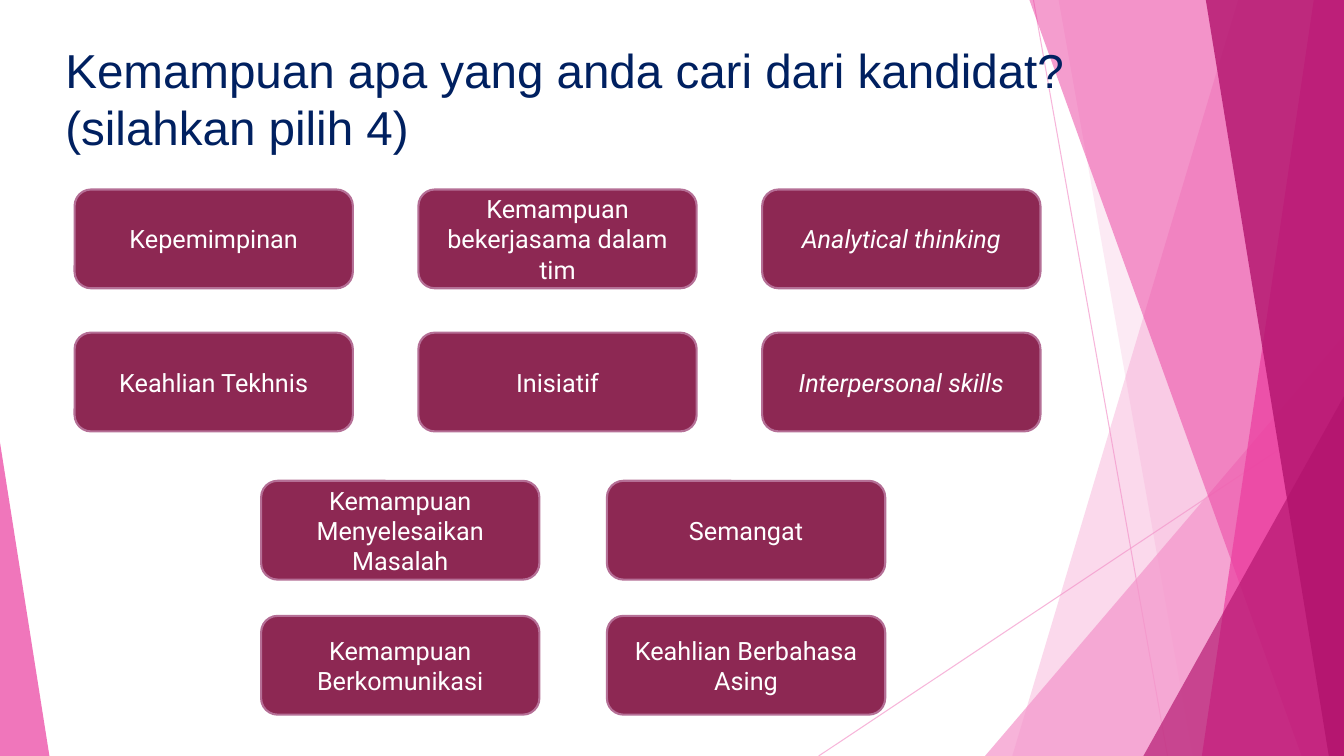
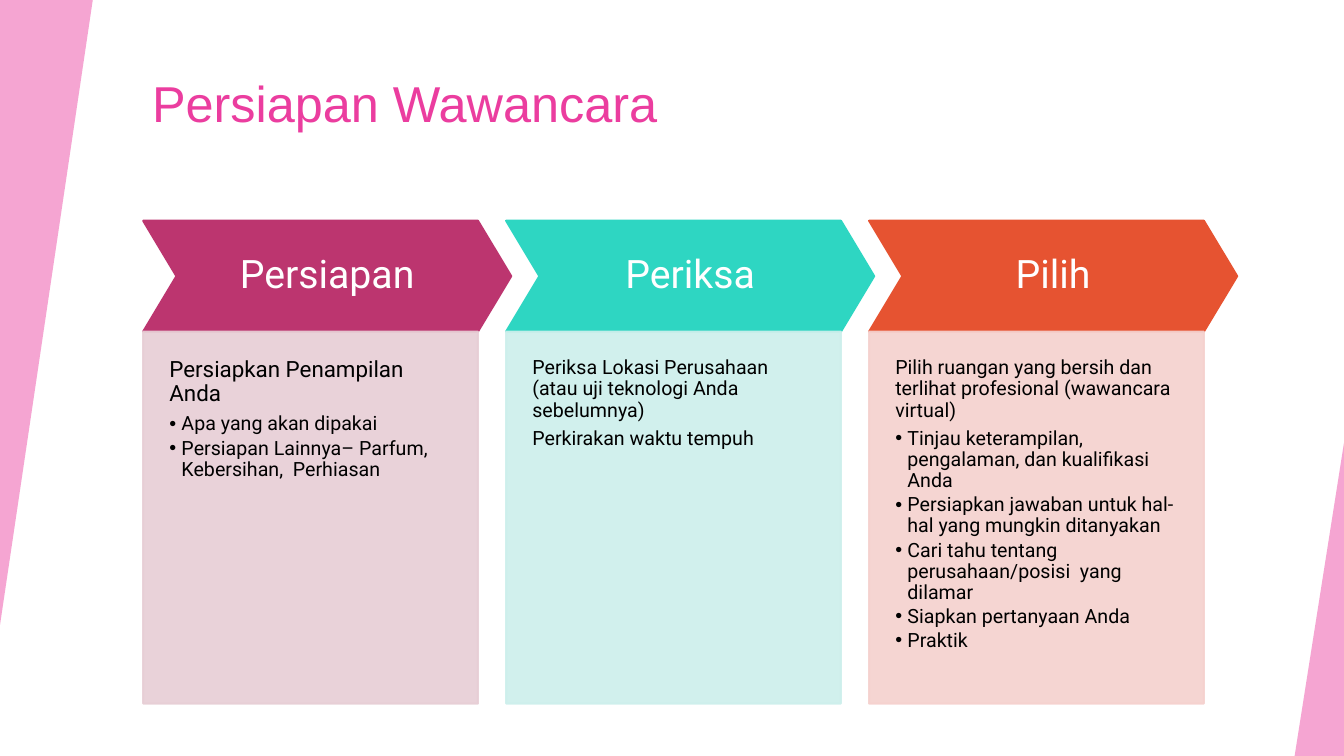
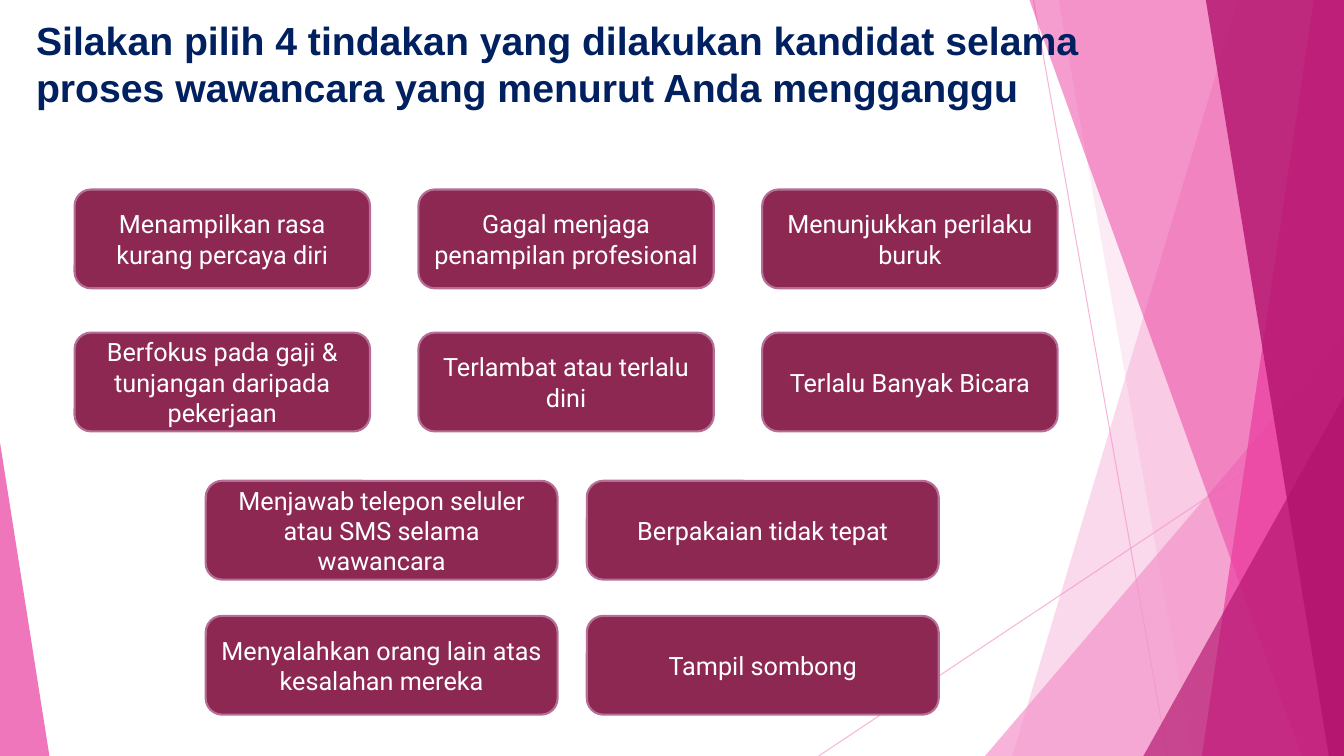
import pptx
import pptx.dml.color
import pptx.enum.shapes
import pptx.enum.text
import pptx.oxml.ns
import pptx.util
from dataclasses import dataclass
from lxml import etree

PX = 9144  # 100 px to the inch
WIDE, HIGH = 1333, 750
KIND = pptx.enum.shapes.MSO_SHAPE
ALIGN = pptx.enum.text.PP_ALIGN
ANCHOR = pptx.enum.text.MSO_ANCHOR


@dataclass(frozen=True)
class Theme:
    head: str = "Arial"
    body: str = "Roboto"
    navy: str = "002060"
    rose: str = "F496CB"
    pink: str = "EB3D9F"
    plum: str = "B2136D"
    tile: str = "8D2853"
    edge: str = "B56F96"
    white: str = "FFFFFF"
    black: str = "000000"
    tile_size: int = 18
    step_size: int = 28
    lead_size: int = 16
    text_size: int = 14
    line: float = 1.5
    thin: float = 0.75


T = Theme()

# Backdrop: lines, then bands and corner triangles from back to front
RAYS = [((1025, 0), (1158, HIGH)), ((WIDE, 403), (812, HIGH))]
# (top left x, bottom left x), reaching to the right edge
BANDS = {
    "rose wide": (1228, 1004, T.rose, 36),
    "rose pale": (1050, 1183, T.rose, 20),
    "pink wide": (1021, 1291, T.pink, 50),
    "pink slim": (1303, 1192, T.pink, 70),
    "plum": (1196, 1318, T.plum, 80),
}
# (left, top, width, height), apex, colour, opacity
WEDGES = {
    "rose": ((977, 333, 356, 417), 1, T.rose, 72),
    "plum": ((1134, 393, 199, 357), 1, T.plum, 66),
    "left": ((0, 439, 49, 311), 0, T.pink, 70),
}
LAYERS = ["rose wide", "rose pale", "rose", "pink wide", "pink slim",
          "plum", "plum", "left"]
ORDER = [(BANDS, "rose wide"), (BANDS, "rose pale"), (WEDGES, "rose"),
         (BANDS, "pink wide"), (BANDS, "pink slim"), (BANDS, "plum"),
         (WEDGES, "plum"), (WEDGES, "left")]

SLANT = {"Analytical thinking", "Interpersonal skills"}

SKILLS = {
    "title": "Kemampuan apa yang anda cari dari kandidat? (silahkan pilih 4)",
    "box": (55, 36, 1080, 107), "size": 34, "bold": False,
    "grids": [
        {"left": 74, "top": 188, "step": 341, "drop": 142, "width": 276,
         "rows": [("Kepemimpinan", "Kemampuan bekerjasama dalam tim",
                   "Analytical thinking"),
                  ("Keahlian Tekhnis", "Inisiatif", "Interpersonal skills")]},
        {"left": 259, "top": 477, "step": 343, "drop": 134, "width": 276,
         "rows": [("Kemampuan Menyelesaikan Masalah", "Semangat"),
                  ("Kemampuan Berkomunikasi", "Keahlian Berbahasa Asing")]},
    ],
}
FAULTS = {
    "title": "Silakan pilih 4 tindakan yang dilakukan kandidat selama "
             "proses wawancara yang menurut Anda mengganggu",
    "box": (26, 11, 1160, 107), "size": 28, "bold": True,
    "grids": [
        {"left": 74, "top": 188, "step": 341, "drop": 142, "width": 293,
         "rows": [("Menampilkan rasa kurang percaya diri",
                   "Gagal menjaga penampilan profesional",
                   "Menunjukkan perilaku buruk"),
                  ("Berfokus pada gaji & tunjangan daripada pekerjaan",
                   "Terlambat atau terlalu dini", "Terlalu Banyak Bicara")]},
        {"left": 204, "top": 477, "step": 378, "drop": 134, "width": 349,
         "rows": [("Menjawab telepon seluler atau SMS selama wawancara",
                   "Berpakaian tidak tepat"),
                  ("Menyalahkan orang lain atas kesalahan mereka",
                   "Tampil sombong")]},
    ],
}
# (heading, colour, panel colour, lead size, leads, bullets)
STEPS = [
    ("Persiapan", "BC356F", "E7CED5", T.lead_size,
     ["Persiapkan Penampilan Anda"],
     ["Apa yang akan dipakai",
      "Persiapan Lainnya– Parfum, Kebersihan,  Perhiasan"]),
    ("Periksa", "2ED6C2", "CDEFEC", T.text_size,
     ["Periksa Lokasi Perusahaan (atau uji teknologi Anda sebelumnya)",
      "Perkirakan waktu tempuh"], []),
    ("Pilih", "E65331", "F5D1CE", T.text_size,
     ["Pilih ruangan yang bersih dan terlihat profesional "
      "(wawancara virtual)"],
     ["Tinjau keterampilan, pengalaman, dan kualifikasi Anda",
      "Persiapkan jawaban untuk hal-hal yang mungkin ditanyakan",
      "Cari tahu tentang perusahaan/posisi  yang dilamar",
      "Siapkan pertanyaan Anda", "Praktik"]),
]


def emu(*nums):
    return [pptx.util.Emu(num * PX) for num in nums]


def rgb(code):
    return pptx.dml.color.RGBColor.from_string(code)


def tag(node, name, **attrs):
    return etree.SubElement(node, pptx.oxml.ns.qn(name), attrs)


def fade(shape, alpha):
    """Set the opacity, in percent, of fill and line."""
    for clr in shape.element.spPr.iter(pptx.oxml.ns.qn("a:srgbClr")):
        tag(clr, "a:alpha", val=str(alpha * 1000))


def paint(shape, fill, edge=None, alpha=100):
    shape.shadow.inherit = False
    shape.fill.solid()
    shape.fill.fore_color.rgb = rgb(fill)
    if edge:
        shape.line.color.rgb = rgb(edge)
        shape.line.width = pptx.util.Pt(T.line)
    else:
        shape.line.fill.background()
    if alpha < 100:
        fade(shape, alpha)


def style(para, face, size, tint, bold=False, slant=False):
    for run in para.runs:
        font = run.font
        font.name, font.size = face, pptx.util.Pt(size)
        font.color.rgb = rgb(tint)
        font.bold, font.italic = bold, slant


def inset(frame, *sides):
    (frame.margin_left, frame.margin_top,
     frame.margin_right, frame.margin_bottom) = emu(*sides)


def title(slide, text, box, size, tint, bold=False):
    frame = slide.shapes.add_textbox(*emu(*box)).text_frame
    frame.word_wrap = True
    frame.text = text
    style(frame.paragraphs[0], T.head, size, tint, bold)


def wedge(slide, box, apex, tint, alpha):
    shape = slide.shapes.add_shape(KIND.ISOSCELES_TRIANGLE, *emu(*box))
    shape.adjustments[0] = apex
    paint(shape, tint, alpha=alpha)
    return shape


def band(slide, top, foot, tint, alpha):
    form = slide.shapes.build_freeform(top, 0, PX)
    form.add_line_segments([(WIDE, 0), (WIDE, HIGH), (foot, HIGH)], close=True)
    paint(form.convert_to_shape(), tint, alpha=alpha)


def backdrop(slide):
    for start, end in RAYS:
        ray = slide.shapes.add_connector(
            pptx.enum.shapes.MSO_CONNECTOR.STRAIGHT, *emu(*start, *end))
        ray.line.color.rgb = rgb(T.rose)
        ray.line.width = pptx.util.Pt(T.thin)
        fade(ray, 70)
        tag(ray.element.spPr, "a:effectLst")
    for group, name in ORDER:
        draw = band if group is BANDS else wedge
        draw(slide, *group[name])


def tile(slide, text, box):
    shape = slide.shapes.add_shape(KIND.ROUNDED_RECTANGLE, *emu(*box))
    paint(shape, T.tile, T.edge)
    frame = shape.text_frame
    frame.word_wrap = True
    frame.vertical_anchor = ANCHOR.MIDDLE
    frame.text = text
    para = frame.paragraphs[0]
    para.alignment = ALIGN.CENTER
    style(para, T.body, T.tile_size, T.white, slant=text in SLANT)


def choices(slide, data):
    """Draw a slide of tiles to choose from."""
    backdrop(slide)
    title(slide, data["title"], data["box"], data["size"], T.navy, data["bold"])
    for grid in data["grids"]:
        for row, texts in enumerate(grid["rows"]):
            for col, text in enumerate(texts):
                tile(slide, text, (grid["left"] + col * grid["step"],
                                   grid["top"] + row * grid["drop"],
                                   grid["width"], 98))


def space(para, size, share):
    para.line_spacing = 0.9
    para.space_after = pptx.util.Pt(size * share)


def bullet(para):
    para.level = 1
    props = para._p.get_or_add_pPr()
    props.set("marL", str(12 * PX))
    props.set("indent", str(-12 * PX))
    tag(props, "a:buFont", typeface="Arial")
    tag(props, "a:buChar", char="•")


def arrow(slide, left, text, tint):
    shape = slide.shapes.add_shape(KIND.CHEVRON, *emu(left, 219, 365, 110))
    shape.adjustments[0] = 0.3
    paint(shape, tint, tint)
    frame = shape.text_frame
    frame.word_wrap = True
    frame.vertical_anchor = ANCHOR.MIDDLE
    inset(frame, 14, 14, 14, 14)
    frame.text = text
    para = frame.paragraphs[0]
    para.alignment = ALIGN.CENTER
    space(para, T.step_size, 0.35)
    style(para, T.body, T.step_size, T.white)


def panel(slide, left, tint, size, leads, points):
    shape = slide.shapes.add_shape(KIND.RECTANGLE, *emu(left, 329, 332, 369))
    paint(shape, tint, tint, 90)
    frame = shape.text_frame
    frame.word_wrap = True
    frame.vertical_anchor = ANCHOR.TOP
    inset(frame, 26, 26, 26, 53)
    frame.text = "\n".join(leads + points)
    for num, para in enumerate(frame.paragraphs):
        lead = num < len(leads)
        pts = size if lead else T.text_size
        para.alignment = ALIGN.LEFT
        space(para, pts, 0.35 if lead else 0.15)
        if not lead:
            bullet(para)
        style(para, T.body, pts, T.black)


def process(slide):
    title(slide, "Persiapan Wawancara", (141, 67, 1115, 120), 36, T.pink)
    wedge(slide, (0, 0, 92, 620), 1, T.rose, 85).rotation = 180
    wedge(slide, (1284, 439, 49, 311), 1, T.rose, 85)
    for num, (head, tint, pale, *body) in enumerate(STEPS):
        left = 142 + num * 360
        arrow(slide, left, head, tint)
        panel(slide, left, pale, *body)


def main():
    deck = pptx.Presentation()
    deck.slide_width, deck.slide_height = emu(WIDE, HIGH)
    blank = deck.slide_layouts[6]
    choices(deck.slides.add_slide(blank), SKILLS)
    process(deck.slides.add_slide(blank))
    choices(deck.slides.add_slide(blank), FAULTS)
    deck.save("out.pptx")


if __name__ == "__main__":
    main()
